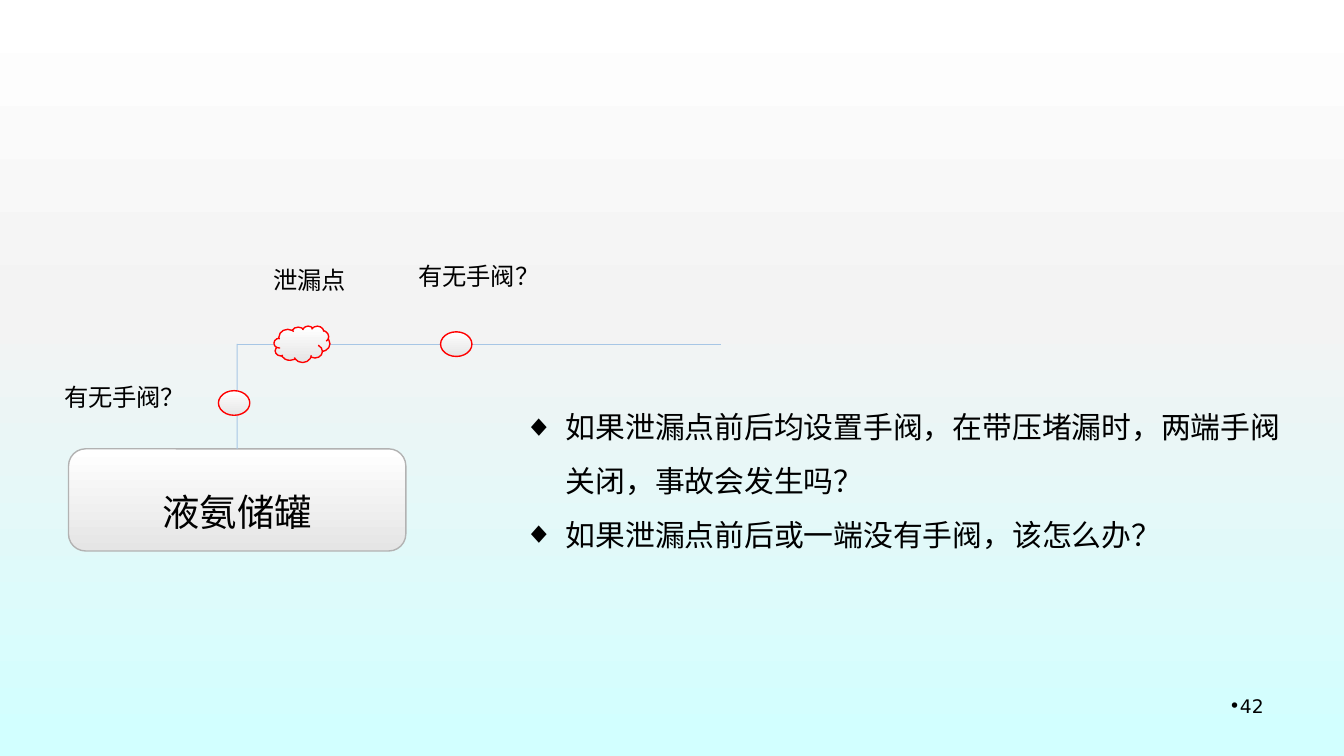
from pptx import Presentation
from pptx.dml.color import RGBColor
from pptx.enum.shapes import MSO_CONNECTOR, MSO_SHAPE
from pptx.enum.text import MSO_ANCHOR, MSO_AUTO_SIZE, PP_ALIGN
from pptx.oxml.ns import qn
from pptx.util import Pt
from lxml.etree import SubElement

COLORS = {
    "text": "000000",
    "white": "FFFFFF",
    "pale": "F3F3F3",
    "cyan": "D2FFFF",
    "gray": "E5E5E5",
    "border": "B2B2B2",
    "pipe": "A7C6E5",
    "alert": "FF0000",
}
BACKGROUND = [(0, "white"), (42, "pale"), (98, "cyan"), (100, "cyan")]
METAL = [(0, "white"), (100, "gray")]
PIPE_Y = 184.3


def rgb(name):
    """Return the named colour."""
    return RGBColor.from_string(COLORS[name])


def set_gradient(fill, root, stops):
    """Fill from top to bottom with (percent, colour) stops."""
    fill.gradient()
    fill.gradient_angle = 270
    gs_list = root.find(".//" + qn("a:gsLst"))
    for gs in list(gs_list):
        gs_list.remove(gs)
    for pos, color in stops:
        gs = SubElement(gs_list, qn("a:gs"), pos=str(pos * 1000))
        SubElement(gs, qn("a:srgbClr"), val=COLORS[color])


def set_text(tf, *texts, size, font="Arial", align=None, spacing=None,
             bullet=None, indent=0):
    """Write each text as a paragraph of the frame."""
    for i, text in enumerate(texts):
        p = tf.paragraphs[0] if i == 0 else tf.add_paragraph()
        if align is not None:
            p.alignment = align
        if spacing:
            p.line_spacing = spacing
        if bullet:
            pPr = p._p.get_or_add_pPr()
            pPr.set("marL", str(Pt(indent)))
            pPr.set("indent", str(Pt(-indent)))
            SubElement(pPr, qn("a:buFont"), typeface=font)
            SubElement(pPr, qn("a:buChar"), char=bullet)
        r = p.add_run()
        r.text = text
        r.font.size = Pt(size)
        r.font.name = font
        r.font.color.rgb = rgb("text")


def add_text(slide, x, y, w, h, *texts, grow=True, **fmt):
    """Add a wrapping text box."""
    tf = slide.shapes.add_textbox(Pt(x), Pt(y), Pt(w), Pt(h)).text_frame
    tf.word_wrap = True
    if grow:
        tf.auto_size = MSO_AUTO_SIZE.SHAPE_TO_FIT_TEXT
    set_text(tf, *texts, **fmt)


def add_part(slide, kind, x, y, w, h, line="alert"):
    """Add a metallic outlined shape."""
    s = slide.shapes.add_shape(kind, Pt(x), Pt(y), Pt(w), Pt(h))
    s.shadow.inherit = False
    set_gradient(s.fill, s._element.spPr, METAL)
    s.line.color.rgb = rgb(line)
    s.line.width = Pt(0.75)
    return s


def add_pipe(slide, x1, y1, x2, y2):
    """Add a thin straight pipe."""
    c = slide.shapes.add_connector(
        MSO_CONNECTOR.STRAIGHT, Pt(x1), Pt(y1), Pt(x2), Pt(y2))
    c.line.color.rgb = rgb("pipe")
    c.line.width = Pt(0.5)
    SubElement(c._element.spPr, qn("a:effectLst"))
    return c


def add_tank(slide):
    """Add the labelled storage tank."""
    s = add_part(slide, MSO_SHAPE.ROUNDED_RECTANGLE, 36.7, 240.5, 180.7, 54.7,
                 line="border")
    tf = s.text_frame
    tf.word_wrap = False
    tf.vertical_anchor = MSO_ANCHOR.MIDDLE
    tf.margin_left = tf.margin_right = Pt(6.5)
    tf.margin_top = tf.margin_bottom = Pt(3.2)
    set_text(tf, "液氨储罐", size=20, align=PP_ALIGN.CENTER, spacing=1.5)
    return s


def main():
    """Build the slide and save it."""
    prs = Presentation()
    prs.slide_width, prs.slide_height = Pt(720), Pt(405)
    slide = prs.slides.add_slide(prs.slide_layouts[6])
    set_gradient(slide.background.fill, slide._element.cSld, BACKGROUND)

    add_text(slide, 516, 368.6, 168, 28, "42", size=10, font="DejaVu Sans",
             align=PP_ALIGN.RIGHT, bullet="•", grow=False)

    tank = add_tank(slide)
    riser = add_pipe(slide, 127, 240.5, 127, PIPE_Y)
    riser.begin_connect(tank, 0)
    add_pipe(slide, 127, PIPE_Y, 386, PIPE_Y)

    add_part(slide, MSO_SHAPE.CLOUD, 146.8, 174.7, 30, 19.5)
    for x, y in [(117, 209.3), (236, 177.8)]:
        add_part(slide, MSO_SHAPE.OVAL, x, y, 16.8, 13.2)

    for x, y, w, label in [(139.5, 138.4, 68, "泄漏点"),
                           (27.2, 201, 89.5, "有无手阀？"),
                           (217, 136.4, 89.5, "有无手阀？")]:
        add_text(slide, x, y, w, 23, label, size=13)

    add_text(slide, 273.6, 206, 432.7, 90.7,
             "如果泄漏点前后均设置手阀，在带压堵漏时，两端手阀关闭，事故会发生吗？",
             "如果泄漏点前后或一端没有手阀，该怎么办？",
             size=16, spacing=1.5, bullet="◆", indent=22.5)
    prs.save("out.pptx")


if __name__ == "__main__":
    main()
